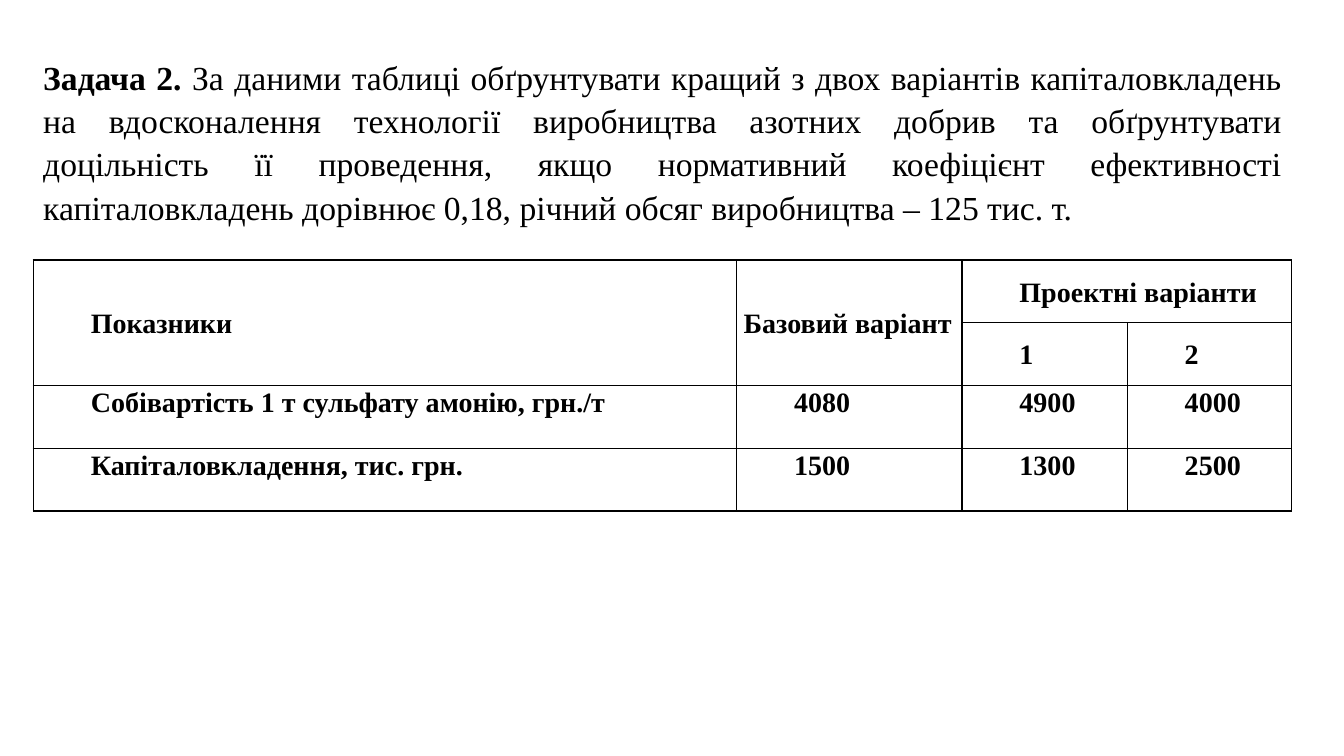
from dataclasses import dataclass

from lxml import etree
from pptx import Presentation, util as u
from pptx.dml import color
from pptx.enum import text
from pptx.oxml import ns


@dataclass(frozen=True)
class Theme:
    face: str = "Times New Roman"
    ink: str = "000000"
    body: int = 24
    cell: int = 20
    line: int = 1
    lead: float = 1.07


class Page:
    """Draws on one slide; lengths are percent of its width or height."""

    def __init__(self, deck, theme):
        self.deck, self.theme = deck, theme
        self.slide = deck.slides.add_slide(deck.slide_layouts[6])

    def wide(self, part):
        return round(self.deck.slide_width * part / 100)

    def high(self, part):
        return round(self.deck.slide_height * part / 100)

    def style(self, para, size, bold=None):
        para.alignment = text.PP_ALIGN.JUSTIFY
        para.line_spacing = self.theme.lead
        font = para.font
        font.name, font.size, font.bold = self.theme.face, u.Pt(size), bold
        font.color.rgb = color.RGBColor.from_string(self.theme.ink)

    def prose(self, left, top, width, height, lead, rest):
        """Adds a justified paragraph that opens with bold words."""
        box = self.slide.shapes.add_textbox(
            self.wide(left), self.high(top), self.wide(width), self.high(height))
        frame = box.text_frame
        frame.word_wrap = True
        frame.auto_size = text.MSO_AUTO_SIZE.SHAPE_TO_FIT_TEXT
        para = frame.paragraphs[0]
        self.style(para, self.theme.body)
        for words, bold in ((lead, True), (rest, False)):
            run = para.add_run()
            run.text, run.font.bold = words, bold

    def border(self, cell):
        props = cell._tc.get_or_add_tcPr()
        for spot, side in enumerate("LRTB"):
            line = etree.Element(ns.qn(f"a:ln{side}"), w=str(u.Pt(self.theme.line)))
            fill = etree.SubElement(line, ns.qn("a:solidFill"))
            etree.SubElement(fill, ns.qn("a:srgbClr"), val=self.theme.ink)
            props.insert(spot, line)

    def table(self, left, top, cols, row, data, spans, heads, flush):
        """Adds a ruled table; heads rows are centred, flush cells not indented."""
        grid = self.slide.shapes.add_table(
            len(data), len(cols), self.wide(left), self.high(top),
            self.wide(sum(cols)), self.high(row * len(data))).table
        grid.first_row = grid.horz_banding = False
        for col, part in zip(grid.columns, cols):
            col.width = self.wide(part)
        for y, words in enumerate(data):
            grid.rows[y].height = self.high(row)
            for x, word in enumerate(words):
                cell = grid.cell(y, x)
                cell.fill.background()
                self.border(cell)
                cell.margin_left = cell.margin_right = u.Inches(0.07)
                cell.margin_top = cell.margin_bottom = 0
                if y < heads:
                    cell.vertical_anchor = text.MSO_ANCHOR.MIDDLE
                para = cell.text_frame.paragraphs[0]
                self.style(para, self.theme.cell, True)
                if word:
                    para.add_run().text = word
                    if (y, x) not in flush:
                        para._p.get_or_add_pPr().set("indent", str(u.Inches(0.5)))
        for start, end in spans:
            grid.cell(*start).merge(grid.cell(*end))


def main():
    deck = Presentation()
    deck.slide_width, deck.slide_height = u.Inches(13.33), u.Inches(7.5)
    page = Page(deck, Theme())
    page.prose(
        2.48, 6.53, 93.62, 24.13, "Задача 2. ",
        "За даними таблиці обґрунтувати кращий з двох варіантів капіталовкладень "
        "на вдосконалення технології виробництва азотних добрив та обґрунтувати "
        "доцільність її проведення, якщо нормативний коефіцієнт ефективності "
        "капіталовкладень дорівнює 0,18, річний обсяг виробництва – 125 тис. т.")
    page.table(
        2.48, 34.4, (52.33, 16.77, 12.3, 12.22), 8.3,
        (("Показники", "Базовий варіант", "Проектні варіанти", ""),
         ("", "", "1", "2"),
         ("Собівартість 1 т сульфату амонію, грн./т", "4080", "4900", "4000"),
         ("Капіталовкладення, тис. грн.", "1500", "1300", "2500")),
        spans=(((0, 0), (1, 0)), ((0, 1), (1, 1)), ((0, 2), (0, 3))),
        heads=2, flush={(0, 1)})
    deck.save("out.pptx")


if __name__ == "__main__":
    main()
